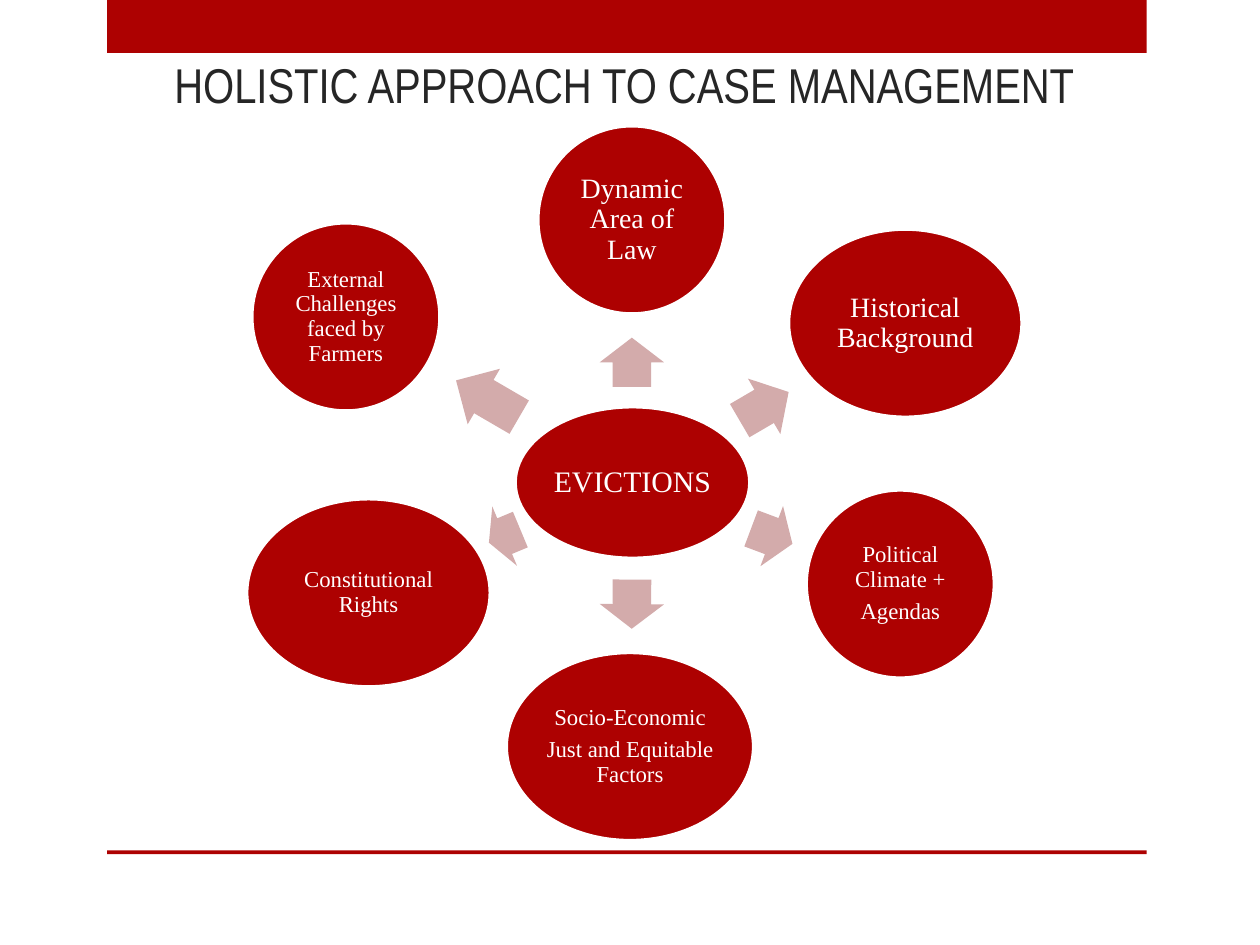
from pptx import Presentation
from pptx.dml.color import RGBColor
from pptx.enum.shapes import MSO_SHAPE
from pptx.enum.text import MSO_ANCHOR, MSO_AUTO_SIZE, PP_ALIGN
from pptx.util import Inches, Pt

RECTANGLE = MSO_SHAPE.RECTANGLE
OVAL = MSO_SHAPE.OVAL
RIGHT_ARROW = MSO_SHAPE.RIGHT_ARROW
MIDDLE = MSO_ANCHOR.MIDDLE
NO_FIT = MSO_AUTO_SIZE.NONE
CENTER = PP_ALIGN.CENTER

RED, PINK, WHITE, INK = "AD0101", "D3ABAB", "FFFFFF", "262626"
NODE_HEIGHT = 1.49
ARROW_HEIGHT = 0.51

HUB = ((4.09, 3.23, 1.86, 1.2), ["EVICTIONS"], 17)

# Clockwise from the top: node left, top, width; paragraphs; text size;
# arrow left, top, width; arrow rotation
FACTORS = [
    ((4.27, 1, 1.49), ["Dynamic Area of Law"], 16, (4.82, 2.62, 0.39), 270),
    ((6.26, 1.82, 1.85), ["Historical Background"], 16, (5.84, 2.97, 0.45), 329.7),
    ((6.4, 3.89, 1.49), ["Political Climate +", "Agendas"], 13, (5.95, 4, 0.35), 20.6),
    ((4.02, 5.18, 1.96), ["Socio-Economic", "Just and Equitable Factors"], 13,
     (4.82, 4.54, 0.39), 90.4),
    ((1.96, 3.96, 1.93), ["Constitutional Rights"], 13, (3.87, 4, 0.27), 157.4),
    ((2, 1.77, 1.49), ["External Challenges faced by Farmers"], 13,
     (3.58, 2.91, 0.58), 210.2),
]


def color(hex_code):
    return RGBColor.from_string(hex_code)


def add_filled(slide, preset, box, fill):
    """Add a preset shape with a plain fill and no outline or shadow."""
    shape = slide.shapes.add_shape(preset, *map(Inches, box))
    shape.shadow.inherit = False
    shape.fill.solid()
    shape.fill.fore_color.rgb = color(fill)
    shape.line.fill.background()
    return shape


def add_run(paragraph, text, font_name, size, hex_code):
    run = paragraph.add_run()
    run.text = text
    run.font.name = font_name
    run.font.size = Pt(size)
    run.font.color.rgb = color(hex_code)


def add_title(slide, box, text):
    title = slide.shapes.title
    title.left, title.top, title.width, title.height = map(Inches, box)
    frame = title.text_frame
    frame.auto_size = NO_FIT
    frame.word_wrap = True
    frame.vertical_anchor = MIDDLE
    paragraph = frame.paragraphs[0]
    paragraph.alignment = CENTER
    add_run(paragraph, text, "Arial Narrow", 27.9, INK)


def add_node(slide, box, lines, size):
    node = add_filled(slide, OVAL, box, RED)
    node.line.color.rgb = color(WHITE)
    node.line.width = Pt(1.75)
    frame = node.text_frame
    frame.word_wrap = True
    frame.vertical_anchor = MIDDLE
    frame.margin_left = frame.margin_right = Inches(0.02)
    frame.margin_top = frame.margin_bottom = Inches(0.02)
    for index, line in enumerate(lines):
        paragraph = frame.add_paragraph() if index else frame.paragraphs[0]
        paragraph.alignment = CENTER
        paragraph.line_spacing = 0.9
        paragraph.space_after = Pt(round(size * 0.35, 1))
        add_run(paragraph, line, "Times New Roman", size, WHITE)


def add_arrow(slide, box, rotation):
    arrow = add_filled(slide, RIGHT_ARROW, box, PINK)
    arrow.adjustments[0] = 0.6
    arrow.adjustments[1] = 0.5
    arrow.rotation = rotation


def add_radial_diagram(slide, hub, factors):
    add_node(slide, *hub)
    for node_box, lines, size, arrow_box, rotation in factors:
        add_arrow(slide, (*arrow_box, ARROW_HEIGHT), rotation)
        add_node(slide, (*node_box, NODE_HEIGHT), lines, size)


def main():
    presentation = Presentation()
    presentation.slide_width = Inches(10)
    presentation.slide_height = Inches(7.5)
    slide = presentation.slides.add_slide(presentation.slide_layouts[5])
    add_filled(slide, RECTANGLE, (0.85, 0, 8.25, 0.42), RED)
    add_filled(slide, RECTANGLE, (0.85, 6.75, 8.25, 0.03), RED)
    add_radial_diagram(slide, HUB, FACTORS)
    add_title(slide, (0.83, 0.42, 8.25, 0.5), "HOLISTIC APPROACH TO CASE MANAGEMENT")
    presentation.save("out.pptx")


if __name__ == "__main__":
    main()
